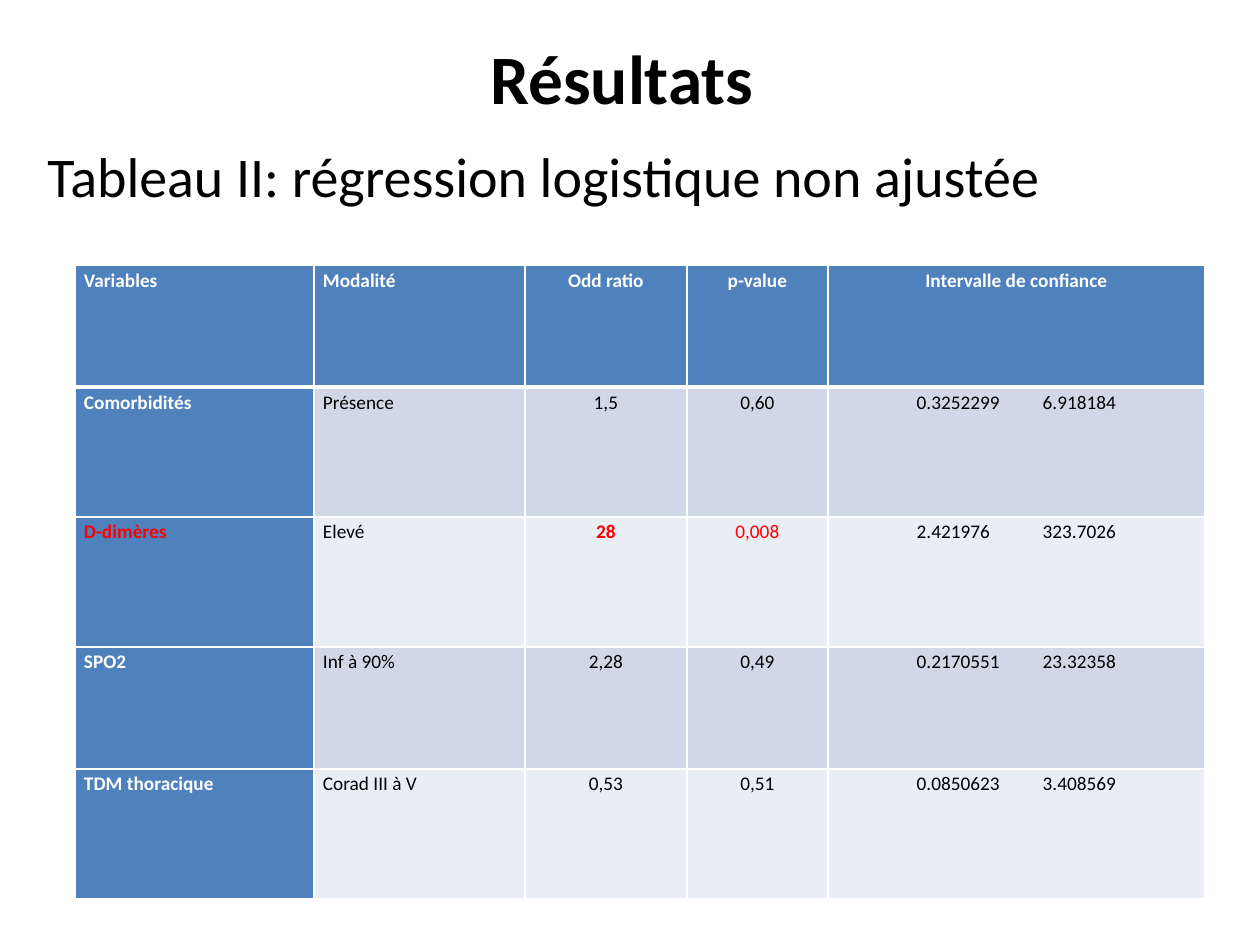
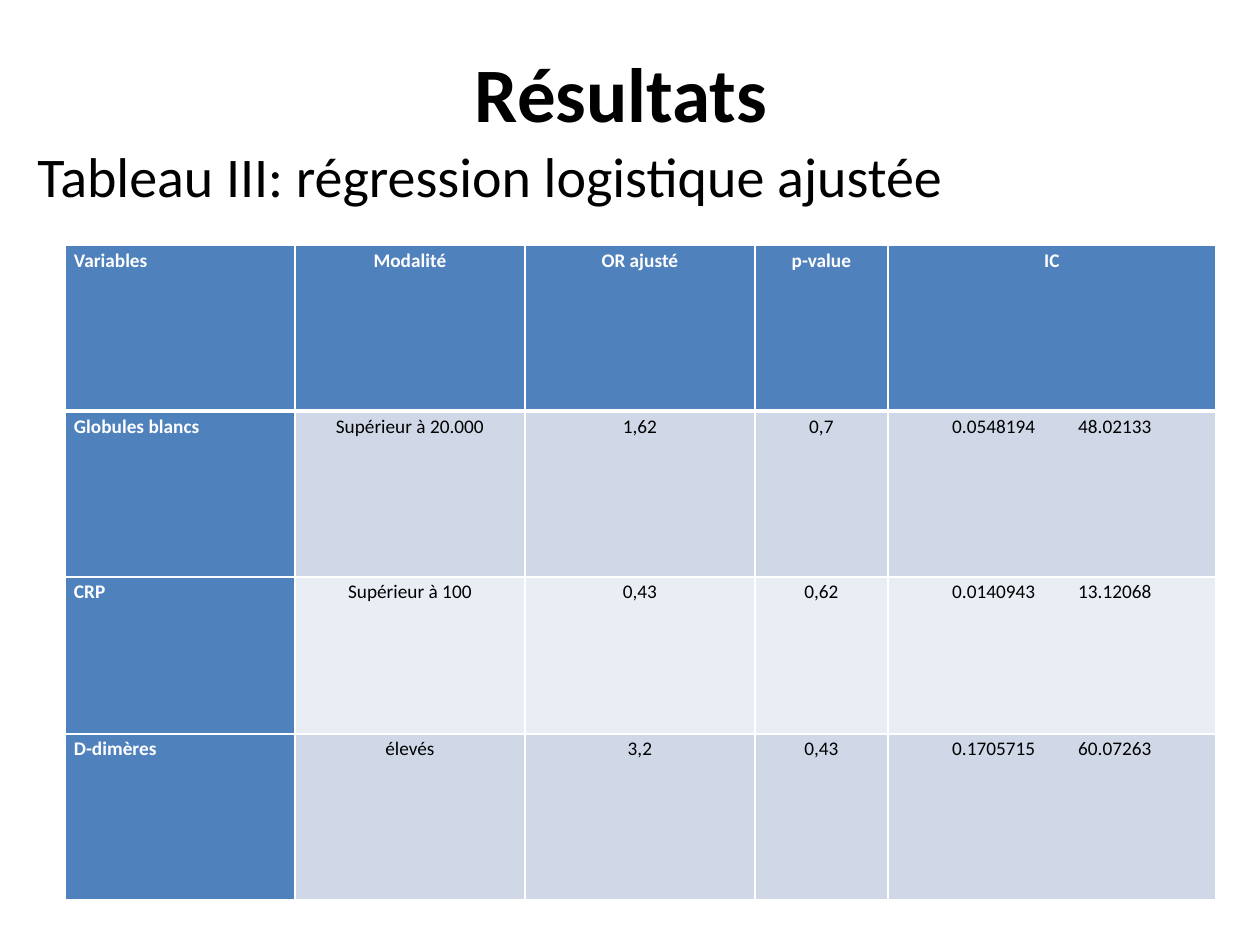
from pptx import Presentation
from pptx.dml.color import RGBColor
from pptx.enum.text import MSO_ANCHOR as Anchor, PP_ALIGN as Align
from pptx.oxml import parse_xml
from pptx.oxml.ns import nsdecls
from pptx.util import Emu, Pt

PX = 914400 // 126
FONT = "Calibri"
COLORS = {
    "text": "000000",
    "header": "4F81BD",
    "header_text": "FFFFFF",
    "band_dark": "D0D8E8",
    "band_light": "E9EDF4",
    "border": "FFFFFF",
    "highlight": "FF0000",
}


def px(length):
    return Emu(length * PX)


def color(name):
    return RGBColor.from_string(COLORS[name])


def style_para(para, size, color_name, bold=False, align=Align.LEFT):
    para.alignment = align
    para.font.name = FONT
    para.font.size = Pt(size)
    para.font.bold = bold
    para.font.color.rgb = color(color_name)


def add_text(page, box, text, size, bold=False, align=Align.LEFT, anchor=Anchor.TOP):
    frame = page.shapes.add_textbox(*map(px, box)).text_frame
    frame.word_wrap = True
    frame.vertical_anchor = anchor
    frame.text = text
    style_para(frame.paragraphs[0], size, "text", bold, align)


def set_borders(cell, row):
    """Draw thin cell borders, with a thick rule under the header row."""
    widths = {"L": 1, "R": 1, "T": 3 if row == 1 else 1, "B": 3 if row == 0 else 1}
    properties = cell._tc.get_or_add_tcPr()
    for side, width in widths.items():
        properties.append(parse_xml(
            f'<a:ln{side} {nsdecls("a")} w="{Pt(width)}"><a:solidFill>'
            f'<a:srgbClr val="{COLORS["border"]}"/></a:solidFill></a:ln{side}>'))


def fill_name(row, column):
    if row == 0 or column == 0:
        return "header"
    return "band_dark" if row % 2 else "band_light"


def add_results_table(page, corner, widths, heights, rows, left_columns,
                      highlights=(), bold_cells=()):
    """Place the table at corner; highlights and bold_cells hold (row, column)."""
    left, top = corner
    box = (left, top, sum(widths), sum(heights))
    table = page.shapes.add_table(len(rows), len(widths), *map(px, box)).table
    for column, width in zip(table.columns, widths):
        column.width = px(width)
    for line, height in zip(table.rows, heights):
        line.height = px(height)
    for row, texts in enumerate(rows):
        for column, text in enumerate(texts):
            cell = table.cell(row, column)
            cell.margin_left = cell.margin_right = px(9)
            cell.margin_top = cell.margin_bottom = 0
            set_borders(cell, row)
            fill = fill_name(row, column)
            cell.fill.solid()
            cell.fill.fore_color.rgb = color(fill)
            cell.text = text
            para = cell.text_frame.paragraphs[0]
            para.line_spacing = 1.15
            is_header = fill == "header"
            text_color = "header_text" if is_header else "text"
            if (row, column) in highlights:
                text_color = "highlight"
            style_para(para, 11, text_color, is_header or (row, column) in bold_cells,
                       Align.LEFT if column in left_columns else Align.CENTER)


def add_results_page(deck, title_height, title_size, caption_box, caption, **table):
    page = deck.slides.add_slide(deck.slide_layouts[6])
    add_text(page, (63, 38, 1134, title_height), "Résultats ", title_size,
             True, Align.CENTER, Anchor.MIDDLE)
    add_text(page, caption_box, caption, 32)
    add_results_table(page, **table)


def main():
    deck = Presentation()
    deck.slide_width, deck.slide_height = px(1260), px(945)
    add_results_page(
        deck, 77, 39.6, (35, 135, 1201, 774),
        "Tableau II: régression logistique non ajustée",
        corner=(75, 265),
        widths=(239, 211, 162, 141, 377),
        heights=(122, 130, 130, 122, 130),
        rows=(
            ("Variables", "Modalité", "Odd ratio", "p-value", "Intervalle de confiance"),
            ("Comorbidités", "Présence", "1,5", "0,60", "0.3252299\t6.918184"),
            ("D-dimères", "Elevé", "28", "0,008", "2.421976\t323.7026"),
            ("SPO2", "Inf à 90%", "2,28", "0,49", "0.2170551\t23.32358"),
            ("TDM thoracique", "Corad III à V", "0,53", "0,51", "0.0850623\t3.408569"),
        ),
        left_columns=(0, 1),
        highlights=((2, 0), (2, 2), (2, 3)),
        bold_cells=((2, 2),),
    )
    add_results_page(
        deck, 107, 44, (25, 135, 1211, 774),
        "Tableau III: régression logistique ajustée",
        corner=(65, 245),
        widths=(230, 230, 230, 133, 328),
        heights=(166, 166, 157, 166),
        rows=(
            ("Variables", "Modalité", "OR ajusté", "p-value", "IC"),
            ("Globules blancs", "Supérieur à 20.000", "1,62", "0,7", "0.0548194\t48.02133"),
            ("CRP", "Supérieur à 100", "0,43", "0,62", "0.0140943\t13.12068"),
            ("D-dimères", "élevés", "3,2", "0,43", "0.1705715\t60.07263"),
        ),
        left_columns=(0,),
    )
    deck.save("out.pptx")


if __name__ == "__main__":
    main()
